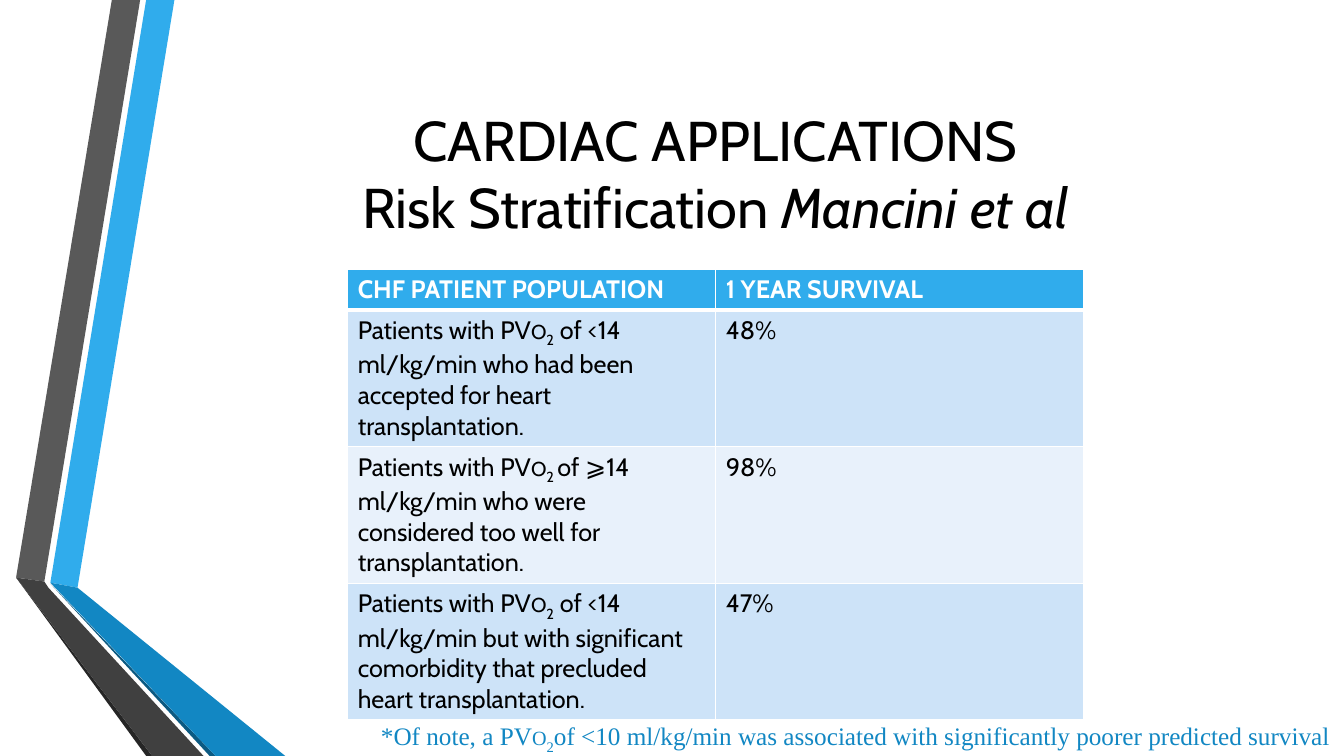
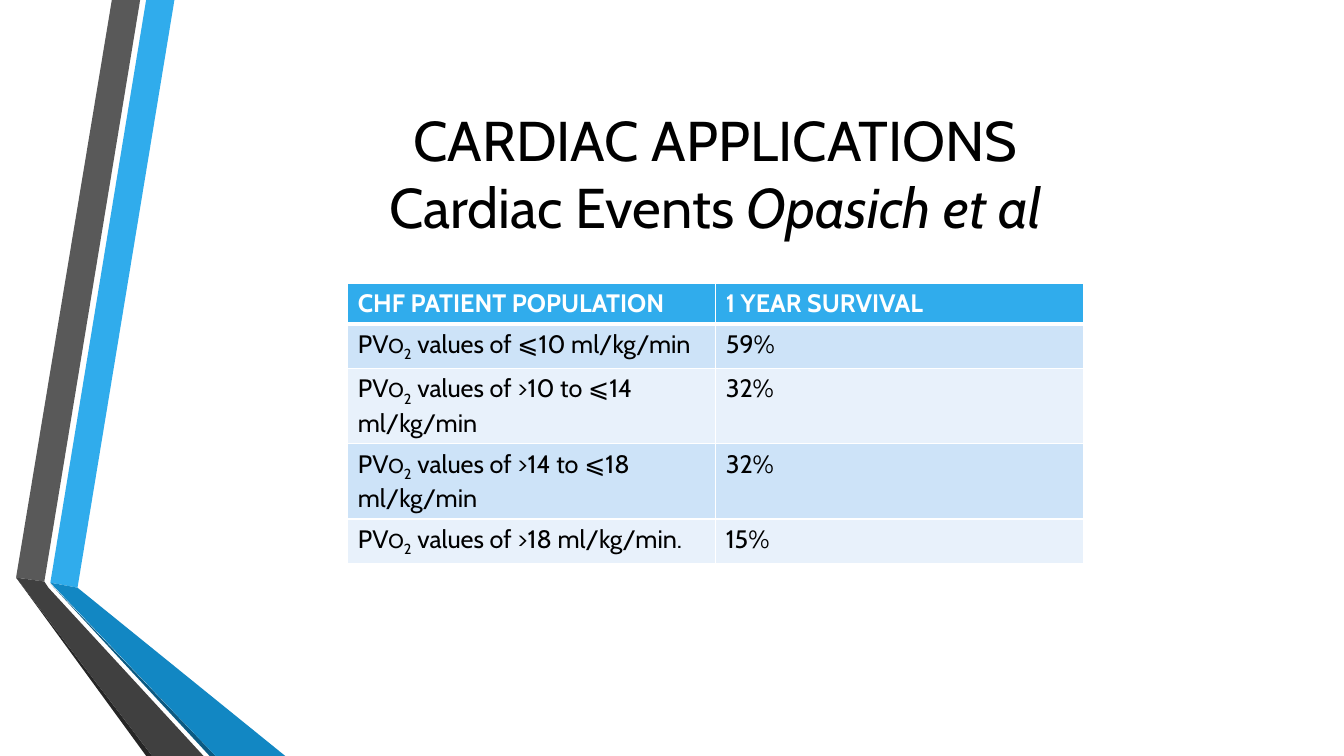
from dataclasses import dataclass

from lxml import etree
from pptx import Presentation
from pptx.dml.color import RGBColor
from pptx.enum.text import MSO_ANCHOR, MSO_AUTO_SIZE, PP_ALIGN
from pptx.oxml.ns import qn
from pptx.util import Pt

CENTER = PP_ALIGN.CENTER
MIDDLE = MSO_ANCHOR.MIDDLE
GROW = MSO_AUTO_SIZE.SHAPE_TO_FIT_TEXT

BLACK, WHITE = "000000", "FFFFFF"
BLUE, DARK_BLUE, DEEP_BLUE = "30ACEC", "1287C3", "0C5A82"
ROW_FILLS = ("CDE3F8", "E8F1FB")
BODY_FONT, NOTE_FONT = "Cabin", "Times New Roman"
TITLE_SIZE, TEXT_SIZE = 40, 18

TABLE_LEFT, COLUMN_WIDTH, ROW_HEIGHT = 248.4, 262.8, 29.2
THIN, THICK = 1, 3
HEADINGS = ("CHF PATIENT POPULATION", "1 YEAR SURVIVAL")


@dataclass(frozen=True)
class Band:
    color: str
    points: tuple[tuple[float, float], ...]


@dataclass(frozen=True)
class OxygenText:
    """Wording around the peak oxygen symbol, whose o is in small capitals."""
    before: str
    after: str
    subscript: str = "2"


@dataclass(frozen=True)
class Group:
    population: OxygenText
    survival: str


@dataclass(frozen=True)
class Study:
    topic: str
    authors: str
    table_top: float
    groups: tuple[Group, ...]
    note: OxygenText | None = None


BANDS = (
    Band(BLUE, ((36, 416.2), (55.4, 419.8), (124.6, 0), (104.4, 0))),
    Band("595959", ((100.1, 0), (79.9, 0), (11.5, 412.6), (31.7, 415.4))),
    Band("262626", ((11.5, 412.6), (104.4, 540), (108.7, 540))),
    Band(DEEP_BLUE, ((36, 416.9), (149.8, 540), (154.1, 540))),
    Band(DARK_BLUE, ((36, 416.2), (154.1, 540), (203.8, 540), (55.4, 419.8))),
    Band("404040", ((145.4, 540), (34.6, 419.8), (31.7, 415.4),
                    (11.5, 412.6), (108.7, 540))),
)

STUDIES = (
    Study("Risk Stratification ", "Mancini et al", 192.2, (
        Group(OxygenText("Patients with PV", " of <14 ml/kg/min who had been "
                         "accepted for heart transplantation."), "48%"),
        Group(OxygenText("Patients with PV", "of ⩾14 ml/kg/min who were considered "
                         "too well for transplantation.", "2 "), "98%"),
        Group(OxygenText("Patients with PV", " of <14 ml/kg/min but with significant "
                         "comorbidity that precluded heart transplantation."), "47%"),
    ), OxygenText("*Of note, a PV", "of <10 ml/kg/min was associated with "
                  "significantly poorer predicted survival")),
    Study("Cardiac Events ", "Opasich et al", 202.3, (
        Group(OxygenText("PV", " values of ⩽10 ml/kg/min"), "59%"),
        Group(OxygenText("PV", " values of >10 to ⩽14 ml/kg/min"), "32%"),
        Group(OxygenText("PV", " values of >14 to ⩽18 ml/kg/min"), "32%"),
        Group(OxygenText("PV", " values of >18 ml/kg/min."), "15%"),
    )),
)


def rgb(color: str) -> RGBColor:
    return RGBColor.from_string(color)


def fill_solid(target, color: str) -> None:
    target.fill.solid()
    target.fill.fore_color.rgb = rgb(color)


def format_runs(paragraph, color: str, font: str = BODY_FONT, bold: bool = False) -> None:
    for run in paragraph.runs:
        run.font.name = font
        run.font.size = Pt(TEXT_SIZE)
        run.font.bold = bold
        run.font.color.rgb = rgb(color)


def write_oxygen(paragraph, wording: OxygenText) -> None:
    paragraph.text = wording.before
    for text, attribute, value in (("o", "cap", "small"),
                                   (wording.subscript, "baseline", "-25000"),
                                   (wording.after, "baseline", "0")):
        run = paragraph.add_run()
        run.text = text
        run._r.get_or_add_rPr().set(attribute, value)


def style_master_title(master) -> None:
    for defaults in master.element.xpath("p:txStyles/p:titleStyle/a:lvl1pPr/a:defRPr"):
        defaults.set("sz", str(TITLE_SIZE * 100))
        defaults.find(qn("a:latin")).set("typeface", BODY_FONT)


def place_layout_title(layout) -> None:
    title = layout.placeholders[0]
    title.left, title.top = Pt(116.6), Pt(54)
    title.width, title.height = Pt(789.1), Pt(138.2)


def move_bands_to_layout(slide, layout) -> None:
    """Draw the bands on a slide, then move them to its layout for all slides."""
    for band in BANDS:
        start, *others = [(Pt(x), Pt(y)) for x, y in band.points]
        builder = slide.shapes.build_freeform(*start)
        builder.add_line_segments(others, close=True)
        outline = builder.convert_to_shape()
        outline.shadow.inherit = False
        fill_solid(outline, band.color)
        outline.line.fill.background()
        layout.shapes.element.append(outline.element)


def write_title(slide, study: Study) -> None:
    frame = slide.shapes.title.text_frame
    frame.vertical_anchor = MIDDLE
    heading = frame.paragraphs[0]
    heading.alignment = CENTER
    heading.text = "CARDIAC APPLICATIONS"
    heading.add_line_break()
    heading.add_run().text = study.topic
    authors = heading.add_run()
    authors.text = study.authors
    authors.font.italic = True
    for run in heading.runs:
        run.font.color.rgb = rgb(BLACK)


def set_borders(cell, top: float, bottom: float) -> None:
    properties = cell._tc.get_or_add_tcPr()
    for side, width in (("L", THIN), ("R", THIN), ("T", top), ("B", bottom)):
        line = etree.SubElement(properties, qn(f"a:ln{side}"), w=str(Pt(width)))
        paint = etree.SubElement(line, qn("a:solidFill"))
        etree.SubElement(paint, qn("a:srgbClr"), val=WHITE)


def draw_table(slide, study: Study) -> None:
    row_count = len(study.groups) + 1
    table = slide.shapes.add_table(
        row_count, 2, Pt(TABLE_LEFT), Pt(study.table_top),
        Pt(2 * COLUMN_WIDTH), Pt(row_count * ROW_HEIGHT)).table
    for column, heading in enumerate(HEADINGS):
        cell = table.cell(0, column)
        cell.text_frame.text = heading
        format_runs(cell.text_frame.paragraphs[0], WHITE, bold=True)
        set_borders(cell, THIN, THICK)
        fill_solid(cell, BLUE)
    for row, group in enumerate(study.groups, start=1):
        population, survival = table.cell(row, 0), table.cell(row, 1)
        write_oxygen(population.text_frame.paragraphs[0], group.population)
        survival.text_frame.text = group.survival
        for cell in (population, survival):
            format_runs(cell.text_frame.paragraphs[0], BLACK)
            set_borders(cell, THICK if row == 1 else THIN, THIN)
            fill_solid(cell, ROW_FILLS[(row - 1) % 2])


def draw_note(slide, note: OxygenText) -> None:
    frame = slide.shapes.add_textbox(Pt(265), Pt(511.2), Pt(727.9), Pt(28.8)).text_frame
    frame.word_wrap = True
    frame.auto_size = GROW
    write_oxygen(frame.paragraphs[0], note)
    format_runs(frame.paragraphs[0], DARK_BLUE, NOTE_FONT)


def main() -> None:
    prs = Presentation()
    prs.slide_width, prs.slide_height = Pt(960), Pt(540)
    layout = prs.slide_layouts.get_by_name("Title Only")
    style_master_title(prs.slide_master)
    place_layout_title(layout)
    for study in STUDIES:
        slide = prs.slides.add_slide(layout)
        write_title(slide, study)
        draw_table(slide, study)
        if study.note:
            draw_note(slide, study.note)
    move_bands_to_layout(prs.slides[0], layout)
    prs.save("out.pptx")


if __name__ == "__main__":
    main()
